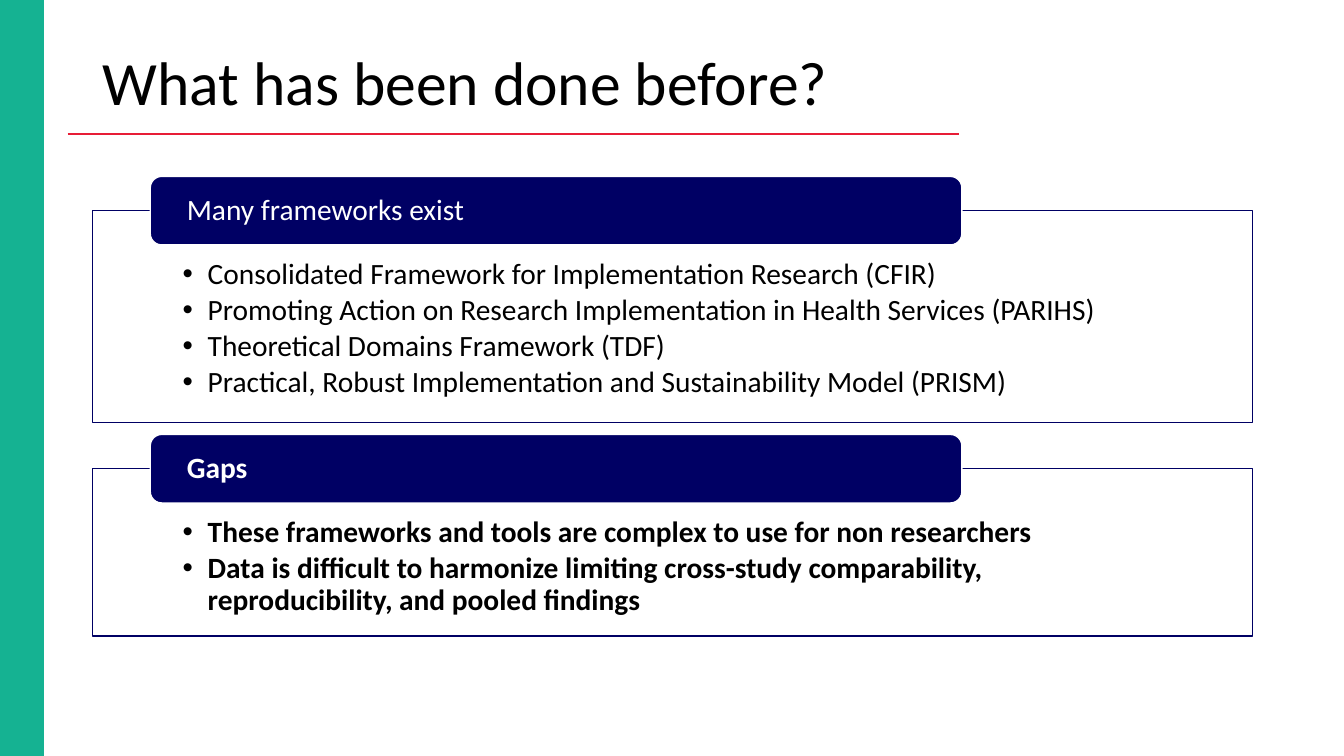
import lxml.etree
import pptx
import pptx.dml.color
import pptx.enum.shapes
import pptx.enum.text
import pptx.oxml.ns
import pptx.util

WHITE = pptx.dml.color.RGBColor(0xFF, 0xFF, 0xFF)
BLACK = pptx.dml.color.RGBColor(0x00, 0x00, 0x00)
NAVY = pptx.dml.color.RGBColor(0x00, 0x00, 0x64)
GREEN = pptx.dml.color.RGBColor(0x15, 0xB2, 0x92)
RED = pptx.dml.color.RGBColor(0xE7, 0x1D, 0x36)

EMU_PER_PX = 9144
FRAME_LEFT, FRAME_WIDTH = 92, 1150
HEADER_LEFT, HEADER_WIDTH, HEADER_HEIGHT = 149, 805, 68
SECTIONS = [
    (209, 210, False, "Many frameworks exist", [
        "Consolidated Framework for Implementation Research (CFIR)",
        "Promoting Action on Research Implementation in Health Services (PARIHS)",
        "Theoretical Domains Framework (TDF)",
        "Practical, Robust Implementation and Sustainability Model (PRISM)",
    ]),
    (465, 166, True, "Gaps", [
        "These frameworks and tools are complex to use for non researchers",
        "Data is difficult to harmonize limiting cross-study comparability, "
        "reproducibility, and pooled findings",
    ]),
]


class SlideBuilder:
    """Holds the style and the current slide and adds each kind of element."""

    font_name = "Calibri"
    line_spacing = 0.9

    def __init__(self, slide):
        self.slide = slide

    def px(self, *lengths):
        return [pptx.util.Emu(length * EMU_PER_PX) for length in lengths]

    def apply(self, target, values):
        for name, value in values.items():
            setattr(target, name, value)

    def place(self, shape, box):
        self.apply(shape, dict(zip(("left", "top", "width", "height"), self.px(*box))))

    def paint(self, shape, fill, line):
        shape.fill.solid()
        shape.fill.fore_color.rgb = fill
        shape.line.color.rgb = line
        shape.line.width = pptx.util.Pt(1)

    def frame_text(self, shape, anchor, margins):
        names = ("margin_left", "margin_top", "margin_right", "margin_bottom")
        self.apply(shape.text_frame, {
            "word_wrap": True,
            "auto_size": pptx.enum.text.MSO_AUTO_SIZE.NONE,
            "vertical_anchor": anchor,
            **dict(zip(names, self.px(*margins))),
        })

    def fill_paragraph(self, paragraph, text, size, color, bold=False, space_after=0):
        self.apply(paragraph, {
            "alignment": pptx.enum.text.PP_ALIGN.LEFT,
            "line_spacing": self.line_spacing,
            "space_before": pptx.util.Pt(0),
            "space_after": pptx.util.Pt(space_after),
        })
        run = paragraph.add_run()
        run.text = text
        self.apply(run.font, {"name": self.font_name, "size": pptx.util.Pt(size), "bold": bold})
        run.font.color.rgb = color

    def title(self, text, box):
        shape = self.slide.shapes.title
        self.place(shape, box)
        self.frame_text(shape, pptx.enum.text.MSO_ANCHOR.TOP, (10, 5, 10, 5))
        self.fill_paragraph(shape.text_frame.paragraphs[0], text, 44, BLACK)

    def bullet_list(self, shape, items, box, bold):
        self.place(shape, box)
        self.paint(shape, WHITE, NAVY)
        self.frame_text(shape, pptx.enum.text.MSO_ANCHOR.TOP, (89, 48, 89, 16))
        for index, item in enumerate(items):
            frame = shape.text_frame
            paragraph = frame.add_paragraph() if index else frame.paragraphs[0]
            paragraph.level = 1
            properties = paragraph._p.get_or_add_pPr()
            indent, = self.px(25)
            properties.set("marL", str(indent))
            properties.set("indent", str(-indent))
            bullet = lxml.etree.SubElement(properties, pptx.oxml.ns.qn("a:buChar"))
            bullet.set("char", "•")
            self.fill_paragraph(paragraph, item, 21, BLACK, bold, space_after=3)

    def block(self, kind, box, fill, line):
        shape = self.slide.shapes.add_shape(kind, *self.px(*box))
        shape.shadow.inherit = False
        self.paint(shape, fill, line)
        return shape

    def header(self, text, box, bold):
        kind = pptx.enum.shapes.MSO_SHAPE.ROUNDED_RECTANGLE
        shape = self.block(kind, box, NAVY, WHITE)
        self.frame_text(shape, pptx.enum.text.MSO_ANCHOR.MIDDLE, (33, 0, 33, 0))
        self.fill_paragraph(shape.text_frame.paragraphs[0], text, 21, WHITE, bold)

    def rule(self, start, end, color, width):
        connector = self.slide.shapes.add_connector(
            pptx.enum.shapes.MSO_CONNECTOR.STRAIGHT, *self.px(*start, *end))
        connector.line.color.rgb = color
        connector.line.width = pptx.util.Pt(width)
        lxml.etree.SubElement(connector._element.spPr, pptx.oxml.ns.qn("a:effectLst"))


def main():
    presentation = pptx.Presentation()
    presentation.slide_width = pptx.util.Emu(1333 * EMU_PER_PX)
    presentation.slide_height = pptx.util.Emu(750 * EMU_PER_PX)
    slide = presentation.slides.add_slide(presentation.slide_layouts.get_by_name("Two Content"))
    builder = SlideBuilder(slide)

    builder.block(pptx.enum.shapes.MSO_SHAPE.RECTANGLE, (0, 0, 43, 750), GREEN, GREEN)
    builder.rule((67, 133), (951, 133), RED, 1.5)
    builder.title("What has been done before?", (92, 47, 1150, 86))

    bodies = list(slide.placeholders)[1:]
    for body, (top, height, bold, heading, items) in zip(bodies, SECTIONS):
        builder.bullet_list(body, items, (FRAME_LEFT, top, FRAME_WIDTH, height), bold)
        header_top = top - HEADER_HEIGHT // 2
        builder.header(heading, (HEADER_LEFT, header_top, HEADER_WIDTH, HEADER_HEIGHT), bold)

    presentation.save("out.pptx")


if __name__ == "__main__":
    main()
